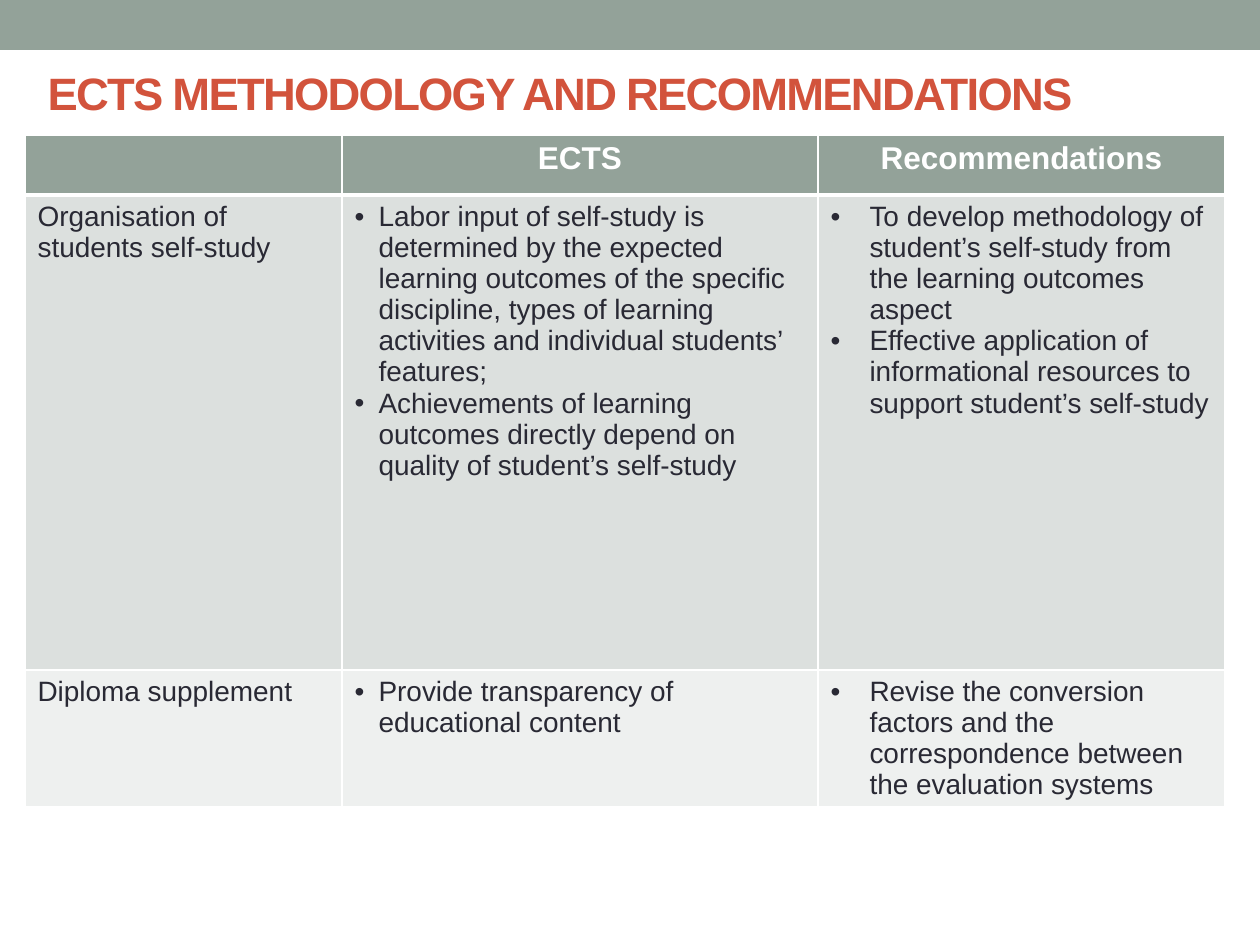
from lxml.etree import SubElement
from pptx import Presentation
from pptx.dml.color import RGBColor
from pptx.enum.shapes import MSO_SHAPE as Shape
from pptx.enum.text import MSO_ANCHOR as Anchor, PP_ALIGN as Align
from pptx.oxml.ns import qn
from pptx.util import Emu, Pt

COLORS = {
    "sage": "93A299",
    "sage_mid": "DCE0DE",
    "sage_pale": "EEF0EF",
    "rust": "D2533C",
    "ink": "292934",
    "white": "FFFFFF",
}
PX_PER_INCH = 126
COLUMN_WIDTHS = [317, 476, 407]
ROW_HEIGHTS = [60, 475, 94]
ROW_FILLS = ["sage", "sage_mid", "sage_pale"]
INDENTS = [0, 24, 39]
ROWS = [
    [[], ["ECTS"], ["Recommendations"]],
    [
        ["Organisation of students self-study"],
        [
            "Labor input of self-study is determined by the expected learning outcomes "
            "of the specific discipline, types of learning activities and individual "
            "students’ features;",
            "Achievements of learning outcomes directly depend on quality of student’s self-study",
        ],
        [
            "To develop methodology of student’s self-study from the learning outcomes aspect",
            "Effective application of informational resources to support student’s self-study",
        ],
    ],
    [
        ["Diploma supplement"],
        ["Provide transparency of educational content"],
        [
            "Revise the conversion factors and the correspondence between the evaluation systems"
        ],
    ],
]


def px(length):
    return Emu(round(length * 914400 / PX_PER_INCH))


def color(name):
    return RGBColor.from_string(COLORS[name])


def write(paragraph, text, size=16, ink="ink", bold=False, align=Align.LEFT,
          indent=0, spacing=None):
    paragraph.alignment = align
    run = paragraph.add_run()
    run.text = text
    font = run.font
    font.name, font.size, font.bold = "Arial", Pt(size), bold
    font.color.rgb = color(ink)
    if spacing is not None:
        font._element.set("spc", str(spacing * 100))
    if indent:
        properties = paragraph._p.get_or_add_pPr()
        properties.set("marL", str(px(indent)))
        properties.set("indent", str(-px(indent)))
        SubElement(properties, qn("a:buFont"), typeface="Arial")
        SubElement(properties, qn("a:buChar"), char="•")


class SlideBuilder:
    def __init__(self, presentation):
        self.slide = presentation.slides.add_slide(presentation.slide_layouts[5])

    def band(self, left, top, width, height, fill):
        shape = self.slide.shapes.add_shape(
            Shape.RECTANGLE, px(left), px(top), px(width), px(height))
        shape.shadow.inherit = False
        shape.fill.solid()
        shape.fill.fore_color.rgb = color(fill)
        shape.line.fill.background()

    def title(self, left, top, width, height, text):
        title = self.slide.shapes.title
        title.left, title.top = px(left), px(top)
        title.width, title.height = px(width), px(height)
        title.text_frame.word_wrap = True
        title.text_frame.vertical_anchor = Anchor.MIDDLE
        write(title.text_frame.paragraphs[0], text, size=25.9, ink="rust",
              bold=True, spacing=-1)

    def table(self, left, top):
        table = self.slide.shapes.add_table(
            len(ROWS), len(COLUMN_WIDTHS), px(left), px(top),
            px(sum(COLUMN_WIDTHS)), px(sum(ROW_HEIGHTS))).table
        for column, width in zip(table.columns, COLUMN_WIDTHS):
            column.width = px(width)
        for row, height in zip(table.rows, ROW_HEIGHTS):
            row.height = px(height)
        for row_index, texts in enumerate(ROWS):
            for column_index, lines in enumerate(texts):
                self.cell(table.cell(row_index, column_index), lines,
                          row_index, column_index)

    def cell(self, cell, lines, row_index, column_index):
        self.border(cell, "lnL", 1)
        self.border(cell, "lnR", 1)
        self.border(cell, "lnT", 3 if row_index == 1 else 1)
        self.border(cell, "lnB", 3 if row_index == 0 else 1)
        cell.fill.solid()
        cell.fill.fore_color.rgb = color(ROW_FILLS[row_index])
        if row_index == 0:
            style = dict(size=18, ink="white", bold=True, align=Align.CENTER)
        else:
            style = dict(indent=INDENTS[column_index])
        frame = cell.text_frame
        for index, line in enumerate(lines):
            paragraph = frame.add_paragraph() if index else frame.paragraphs[0]
            write(paragraph, line, **style)

    def border(self, cell, side, width):
        properties = cell._tc.get_or_add_tcPr()
        line = SubElement(properties, qn(f"a:{side}"), w=str(Pt(width)))
        fill = SubElement(line, qn("a:solidFill"))
        SubElement(fill, qn("a:srgbClr"), val=COLORS["white"])


def main():
    presentation = Presentation()
    presentation.slide_width, presentation.slide_height = px(1260), px(945)
    builder = SlideBuilder(presentation)
    builder.band(0, 0, 1260, 50, "sage")
    builder.table(25, 135)
    builder.title(35, 37, 1134, 110, "ECTS METHODOLOGY AND RECOMMENDATIONS")
    presentation.save("out.pptx")


if __name__ == "__main__":
    main()
